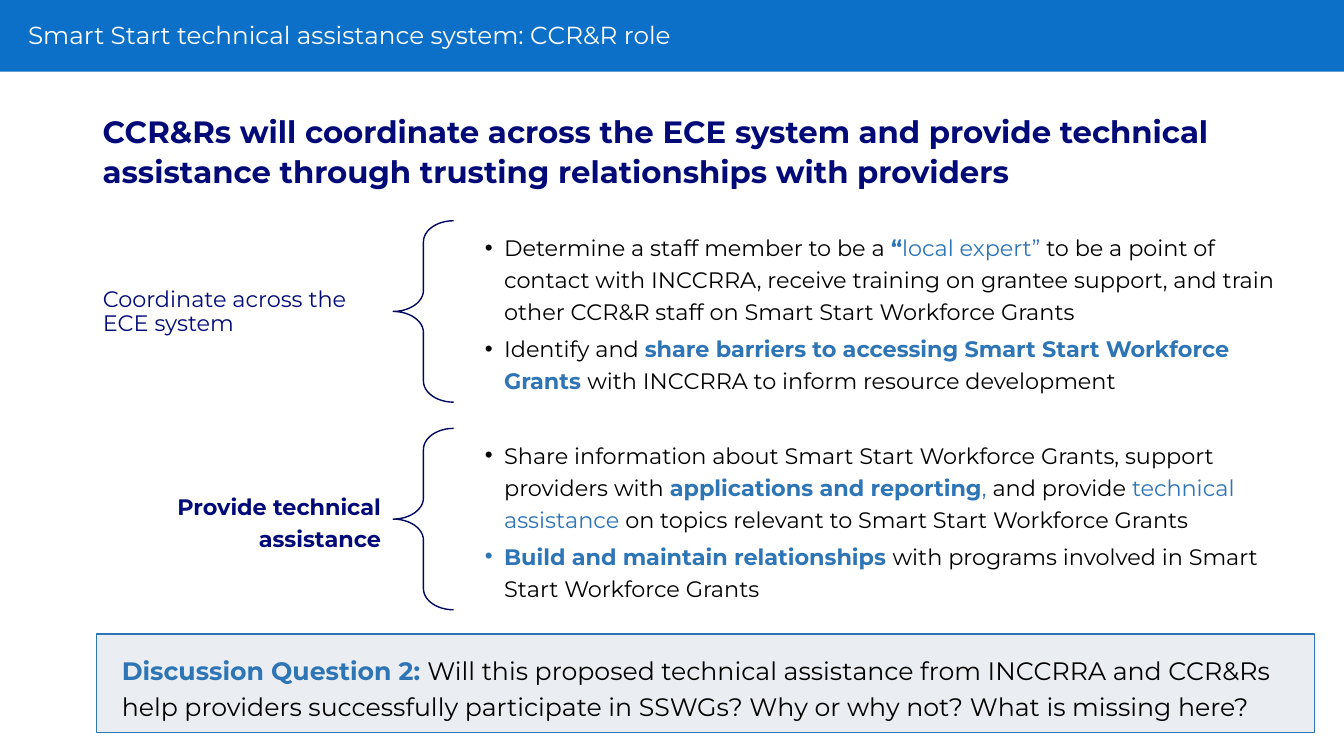
from dataclasses import dataclass

from lxml.etree import SubElement
from pptx import Presentation
from pptx.dml.color import RGBColor
from pptx.enum.shapes import MSO_SHAPE as Preset
from pptx.enum.text import MSO_ANCHOR as Anchor, PP_ALIGN as Align
from pptx.oxml.ns import qn
from pptx.util import Emu, Pt

PX = 9144  # 100 px to the inch
FONT = "Montserrat"
COLORS = {
    "banner": "0C70C8", "navy": "020A78", "brace": "020860", "accent": "2E75B6",
    "black": "000000", "white": "FFFFFF", "question": "D6DCE5",
}


@dataclass(frozen=True)
class Area:
    left: int
    top: int
    width: int
    height: int

    def emu(self) -> list[Emu]:
        return [Emu(n * PX) for n in (self.left, self.top, self.width, self.height)]


@dataclass(frozen=True)
class Span:
    text: str
    color: str = "black"
    bold: bool = False


@dataclass(frozen=True)
class TextStyle:
    size: float
    line_spacing: float = 1.2
    space_after: int = 0
    anchor: Anchor = Anchor.TOP
    align: Align = Align.LEFT
    margins: tuple[int, int] = (10, 5)
    bullet: bool = False


@dataclass(frozen=True)
class Role:
    top: int
    label: Span
    label_style: TextStyle
    bullets: list[list[Span]]


BANNER_STYLE = TextStyle(17.6, 0.9, anchor=Anchor.MIDDLE)
TITLE_STYLE = TextStyle(22, 1.1)
QUESTION_STYLE = TextStyle(18)
BULLET_STYLE = TextStyle(16, space_after=3, anchor=Anchor.MIDDLE, margins=(7, 7), bullet=True)
LEFT_LABEL = TextStyle(16, 0.9, anchor=Anchor.MIDDLE, margins=(12, 4))
RIGHT_LABEL = TextStyle(16, space_after=3, anchor=Anchor.MIDDLE, align=Align.RIGHT,
                        margins=(12, 4))

ROLES = [
    Role(219, Span("Coordinate across the ECE system", "navy"), LEFT_LABEL, [
        [Span("Determine a staff member to be a "),
         Span("“", "accent", True),
         Span("local expert” ", "accent"),
         Span("to be a point of contact with INCCRRA, receive training on grantee support, "
              "and train other CCR&R staff on Smart Start Workforce Grants")],
        [Span("Identify and "),
         Span("share barriers to accessing Smart Start Workforce Grants ", "accent", True),
         Span("with INCCRRA to inform resource development")],
    ]),
    Role(425, Span("Provide technical assistance", "navy", True), RIGHT_LABEL, [
        [Span("Share information about Smart Start Workforce Grants, support providers with "),
         Span("applications and reporting", "accent", True),
         Span(", ", "accent"),
         Span("and provide "),
         Span("technical assistance ", "accent"),
         Span("on topics relevant to Smart Start Workforce Grants")],
        [Span("Build and maintain relationships ", "accent", True),
         Span("with programs involved in Smart Start Workforce Grants")],
    ]),
]


def rgb(name: str) -> RGBColor:
    return RGBColor.from_string(COLORS[name])


def add_bullet(para, color: str) -> None:
    properties = para._p.get_or_add_pPr()
    properties.set("marL", str(19 * PX))
    properties.set("indent", str(-19 * PX))
    bullet_color = SubElement(properties, qn("a:buClr"))
    SubElement(bullet_color, qn("a:srgbClr"), val=COLORS[color])
    SubElement(properties, qn("a:buFont"), typeface="Arial")
    SubElement(properties, qn("a:buChar"), char="•")


def add_text(page, area: Area, style: TextStyle, paragraphs: list[list[Span]]) -> None:
    frame = page.shapes.add_textbox(*area.emu()).text_frame
    frame.word_wrap = True
    frame.vertical_anchor = style.anchor
    side, end = (Emu(n * PX) for n in style.margins)
    frame.margin_left = frame.margin_right = side
    frame.margin_top = frame.margin_bottom = end
    for index, spans in enumerate(paragraphs):
        para = frame.add_paragraph() if index else frame.paragraphs[0]
        if style.bullet:
            add_bullet(para, spans[0].color)
        para.alignment = style.align
        para.line_spacing = style.line_spacing
        para.space_after = Pt(style.space_after)
        for span in spans:
            run = para.add_run()
            run.text = span.text
            run.font.name = FONT
            run.font.size = Pt(style.size)
            run.font.bold = span.bold
            run.font.color.rgb = rgb(span.color)


def add_preset(page, preset: Preset, area: Area, fill: str = "", line: str = ""):
    shape = page.shapes.add_shape(preset, *area.emu())
    shape.shadow.inherit = False
    if fill:
        shape.fill.solid()
        shape.fill.fore_color.rgb = rgb(fill)
    else:
        shape.fill.background()
    if line:
        shape.line.color.rgb = rgb(line)
        shape.line.width = Pt(1)
    else:
        shape.line.fill.background()
    return shape


def add_role(page, role: Role) -> None:
    """Draw a label, its brace and the bullets the brace gathers."""
    add_text(page, Area(90, role.top + 20, 300, 141), role.label_style, [[role.label]])
    brace = add_preset(page, Preset.LEFT_BRACE, Area(390, role.top, 60, 180), line="brace")
    brace.adjustments[0] = 0.35
    brace.adjustments[1] = 0.5
    add_text(page, Area(474, role.top, 815, 180), BULLET_STYLE, role.bullets)


def add_question(page) -> None:
    panel = add_preset(page, Preset.RECTANGLE, Area(96, 629, 1208, 98), "question", "accent")
    fill_color = panel._element.spPr.find(qn("a:solidFill")).find(qn("a:srgbClr"))
    SubElement(fill_color, qn("a:alpha"), val="50000")
    add_text(page, Area(111, 639, 1193, 80), QUESTION_STYLE, [[
        Span("Discussion Question 2: ", "accent", True),
        Span("Will this proposed technical assistance from INCCRRA and CCR&Rs help providers "
             "successfully participate in SSWGs? Why or why not? What is missing here?"),
    ]])


def main() -> None:
    deck = Presentation()
    deck.slide_width, deck.slide_height = Emu(1333 * PX), Emu(750 * PX)
    page = deck.slides.add_slide(deck.slide_layouts[6])

    add_preset(page, Preset.RECTANGLE, Area(0, 0, 1333, 71), "banner")
    add_text(page, Area(18, 11, 1078, 51), BANNER_STYLE,
             [[Span("Smart Start technical assistance system: CCR&R role", "white")]])
    add_text(page, Area(92, 103, 1148, 116), TITLE_STYLE, [[
        Span("CCR&Rs will coordinate across the ECE system and provide technical "
             "assistance through trusting relationships with providers", "navy", True)]])
    for role in ROLES:
        add_role(page, role)
    add_question(page)
    deck.save("out.pptx")


if __name__ == "__main__":
    main()
